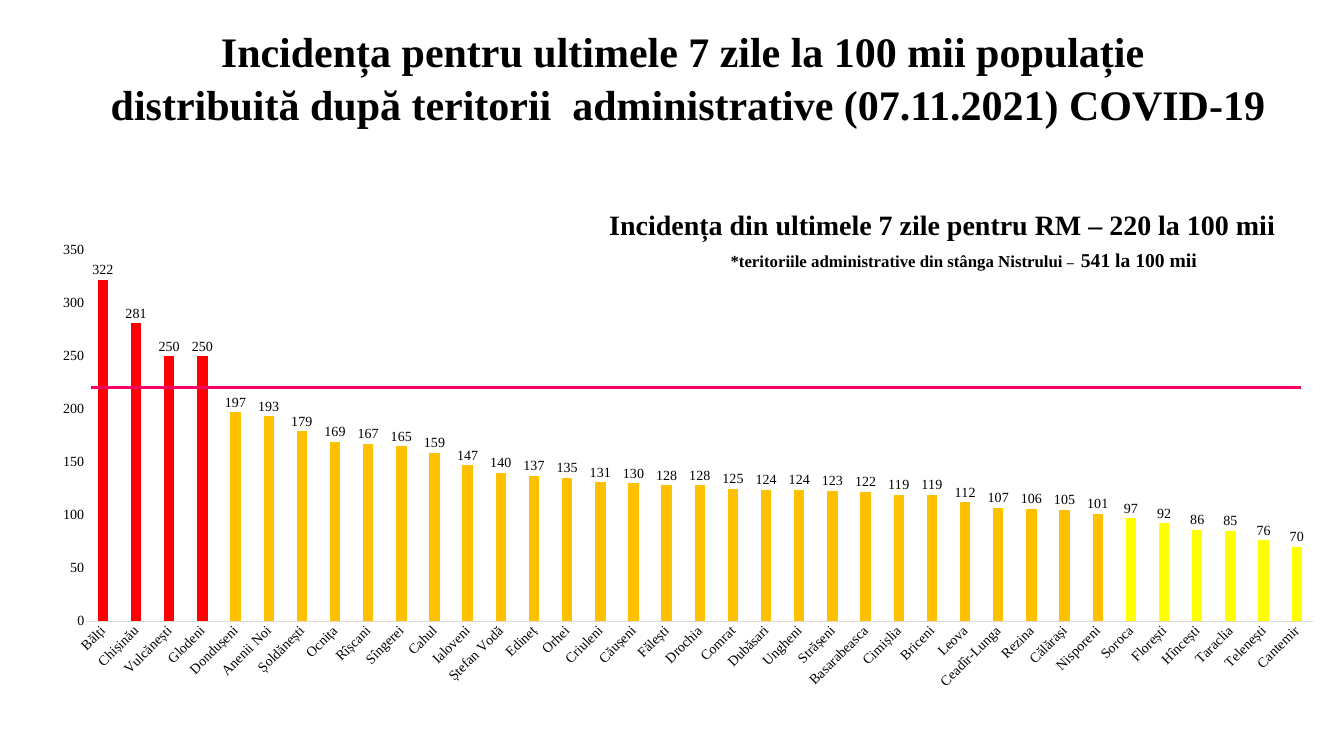
from collections import namedtuple

from lxml.etree import SubElement
from pptx import Presentation
from pptx.chart.data import CategoryChartData
from pptx.dml.color import RGBColor
from pptx.enum.chart import XL_CHART_TYPE, XL_LABEL_POSITION, XL_TICK_MARK
from pptx.enum.shapes import MSO_CONNECTOR
from pptx.enum.text import MSO_ANCHOR, MSO_AUTO_SIZE, PP_ALIGN
from pptx.oxml.ns import qn
from pptx.util import Inches, Pt

Box = namedtuple("Box", "left top width height")

SLIDE_WIDTH, SLIDE_HEIGHT = 26.67, 15
FONT = "Times New Roman"
BLACK = RGBColor(0x00, 0x00, 0x00)
RED = RGBColor(0xFF, 0x00, 0x00)
ORANGE = RGBColor(0xFF, 0xC0, 0x00)
YELLOW = RGBColor(0xFF, 0xFF, 0x00)
PINK = RGBColor(0xFE, 0x00, 0x61)
AXIS_GREY = RGBColor(0xD9, 0xD9, 0xD9)

NATIONAL_RATE, YELLOW_LIMIT, AXIS_MAX = 220, 100, 350
PLOT_SHARE = Box(0.028, 0.031, 0.956, 0.759)

INCIDENCE = {
    "Bălți": 322, "Chișinău": 281, "Vulcănești": 250, "Glodeni": 250,
    "Dondușeni": 197, "Anenii Noi": 193, "Șoldănești": 179, "Ocnița": 169,
    "Rîșcani": 167, "Sîngerei": 165, "Cahul": 159, "Ialoveni": 147,
    "Ștefan Vodă": 140, "Edineț": 137, "Orhei": 135, "Criuleni": 131,
    "Căușeni": 130, "Fălești": 128, "Drochia": 128, "Comrat": 125,
    "Dubăsari": 124, "Ungheni": 124, "Strășeni": 123, "Basarabeasca": 122,
    "Cimișlia": 119, "Briceni": 119, "Leova": 112, "Ceadîr-Lunga": 107,
    "Rezina": 106, "Călărași": 105, "Nisporeni": 101, "Soroca": 97,
    "Florești": 92, "Hîncești": 86, "Taraclia": 85, "Telenești": 76,
    "Cantemir": 70,
}


def share(left, top, width, height):
    return Box(left * SLIDE_WIDTH, top * SLIDE_HEIGHT,
               width * SLIDE_WIDTH, height * SLIDE_HEIGHT)


def inside(box, part):
    return Box(box.left + part.left * box.width, box.top + part.top * box.height,
               part.width * box.width, part.height * box.height)


def emu(box):
    return [Inches(length) for length in box]


def style(font, size, bold=False):
    font.name, font.size, font.bold = FONT, Pt(size), bold
    font.color.rgb = BLACK


def add_heading(slide, box):
    heading = slide.shapes.title
    heading.left, heading.top, heading.width, heading.height = emu(box)
    frame = heading.text_frame
    frame.auto_size = MSO_AUTO_SIZE.NONE
    frame.word_wrap = True
    frame.vertical_anchor = MSO_ANCHOR.TOP
    frame.text = ("Incidența pentru ultimele 7 zile la 100 mii populație \v"
                  "distribuită după teritorii  administrative (07.11.2021) COVID-19")
    paragraph = frame.paragraphs[0]
    paragraph.alignment = PP_ALIGN.CENTER
    paragraph.line_spacing = 1.06
    style(paragraph.font, 60, bold=True)


def add_remark(slide, box, pieces):
    frame = slide.shapes.add_textbox(*emu(box)).text_frame
    frame.word_wrap = True
    paragraph = frame.paragraphs[0]
    paragraph.alignment = PP_ALIGN.CENTER
    style(paragraph.font, pieces[0][1], bold=True)
    for wording, size in pieces:
        run = paragraph.add_run()
        run.text = wording
        run.font.size = Pt(size)


def set_plot_layout(chart):
    plot_area = chart._chartSpace.chart.plotArea
    layout = plot_area.find(qn("c:layout"))
    if layout is None:
        layout = SubElement(plot_area, qn("c:layout"))
        plot_area.insert(0, layout)
    manual = SubElement(layout, qn("c:manualLayout"))
    settings = [("layoutTarget", "inner"), ("xMode", "edge"), ("yMode", "edge")]
    settings += zip("xywh", PLOT_SHARE)
    for tag, value in settings:
        SubElement(manual, qn(f"c:{tag}")).set("val", str(value))


def format_axes(chart):
    territories, rates = chart.category_axis, chart.value_axis
    for axis in (territories, rates):
        axis.major_tick_mark = axis.minor_tick_mark = XL_TICK_MARK.NONE
        axis.has_major_gridlines = False
        style(axis.tick_labels.font, 20)
    territories.format.line.color.rgb = AXIS_GREY
    territories.format.line.width = Pt(0.75)
    slant = territories._element.find(qn("c:txPr")).find(qn("a:bodyPr"))
    slant.set("rot", "-2700000")
    rates.minimum_scale, rates.maximum_scale, rates.major_unit = 0, AXIS_MAX, 50
    rates.format.line.fill.background()
    rates.tick_labels.number_format = "0"
    rates.tick_labels.number_format_is_linked = False


def add_incidence_chart(slide, box):
    incidence = CategoryChartData(number_format="0")
    incidence.categories = list(INCIDENCE)
    incidence.add_series("Series 1", list(INCIDENCE.values()))
    chart = slide.shapes.add_chart(
        XL_CHART_TYPE.COLUMN_CLUSTERED, *emu(box), incidence).chart
    chart.has_title = chart.has_legend = False
    style(chart.font, 20)
    set_plot_layout(chart)
    format_axes(chart)

    columns = chart.plots[0]
    columns.vary_by_categories = False
    columns.gap_width, columns.overlap = 219, -27
    columns.has_data_labels = True
    labels = columns.data_labels
    labels.show_value = True
    labels.number_format, labels.number_format_is_linked = "0", False
    labels.position = XL_LABEL_POSITION.OUTSIDE_END
    style(labels.font, 20)

    territories = columns.series[0]
    territories.format.fill.solid()
    territories.format.fill.fore_color.rgb = ORANGE
    for index, rate in enumerate(INCIDENCE.values()):
        if YELLOW_LIMIT <= rate <= NATIONAL_RATE:
            continue
        fill = territories.points[index].format.fill
        fill.solid()
        fill.fore_color.rgb = RED if rate > NATIONAL_RATE else YELLOW


def add_national_line(slide, plot):
    height = Inches(plot.top + plot.height * (1 - NATIONAL_RATE / AXIS_MAX))
    start = Inches(plot.left + 0.004 * plot.width)
    end = Inches(plot.left + 0.99 * plot.width)
    threshold = slide.shapes.add_connector(
        MSO_CONNECTOR.STRAIGHT, start, height, end, height)
    threshold.line.color.rgb = PINK
    threshold.line.width = Pt(4.5)
    SubElement(threshold._element.spPr, qn("a:effectLst"))


def main():
    deck = Presentation()
    deck.slide_width, deck.slide_height = Inches(SLIDE_WIDTH), Inches(SLIDE_HEIGHT)
    slide = deck.slides.add_slide(deck.slide_layouts[5])
    chart_box = share(0.0375, 0.311, 0.955, 0.646)

    add_incidence_chart(slide, chart_box)
    add_heading(slide, share(0.059, 0.026, 0.906, 0.153))
    add_remark(slide, share(0.441, 0.271, 0.52, 0.051),
               [("Incidența din ultimele 7 zile pentru RM – 220 la 100 mii", 40)])
    add_remark(slide, share(0.467, 0.324, 0.5, 0.038),
               [("*teritoriile administrative din stânga Nistrului ", 24),
                ("–  ", 20), ("541 la 100 mii", 28)])
    add_national_line(slide, inside(chart_box, PLOT_SHARE))
    deck.save("out.pptx")


if __name__ == "__main__":
    main()
